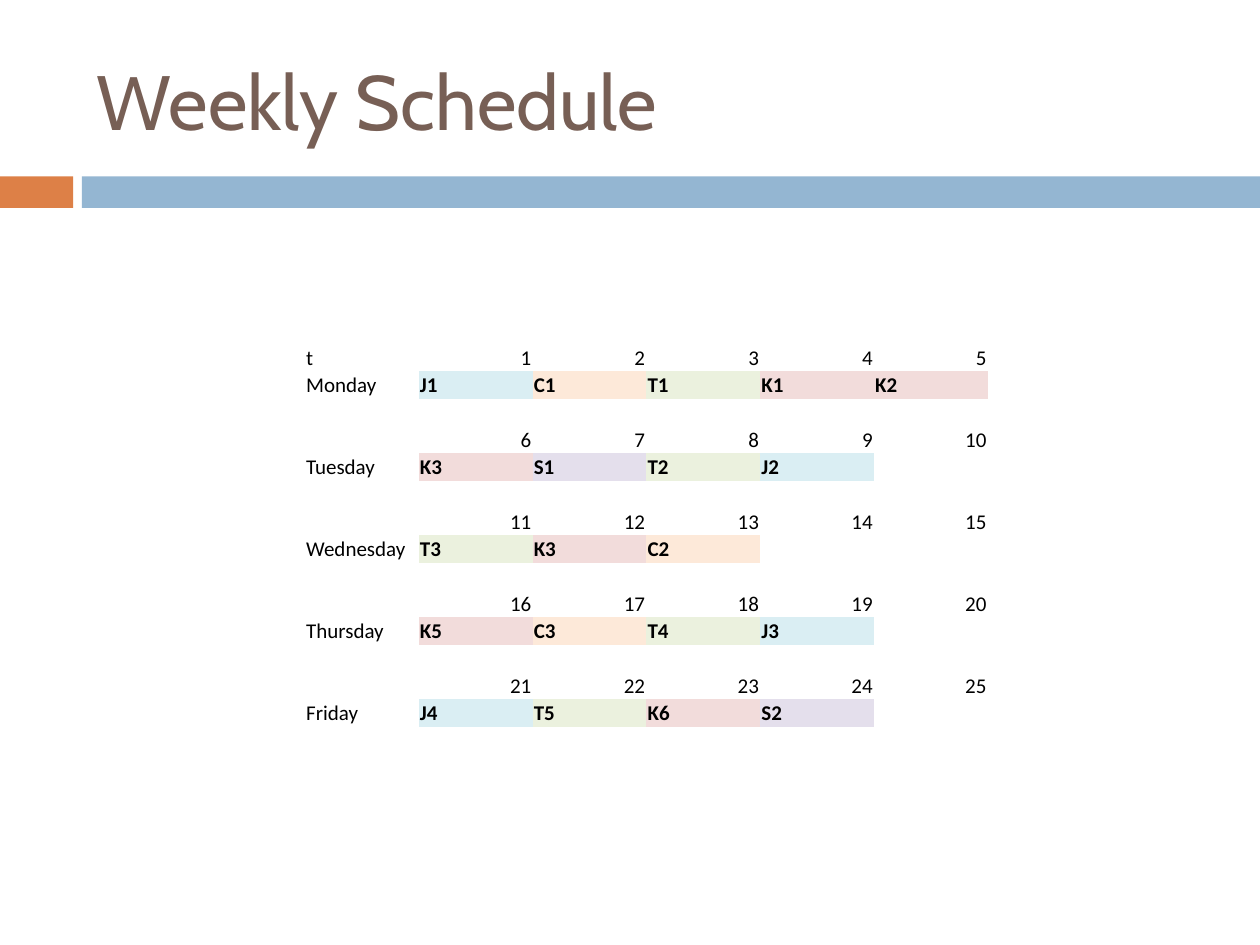
from pptx import Presentation
from pptx import util as u
from pptx.dml.color import RGBColor
from pptx.enum import shapes, text
from pptx.oxml.ns import qn

SUBJECT_FILLS = {"J": "DAEEF3", "C": "FDE9D9", "T": "EBF1DE", "K": "F2DCDB", "S": "E4DFEC"}
WEEK = {
    "Monday": ["J1", "C1", "T1", "K1", "K2"],
    "Tuesday": ["K3", "S1", "T2", "J2"],
    "Wednesday": ["T3", "K3", "C2"],
    "Thursday": ["K5", "C3", "T4", "J3"],
    "Friday": ["J4", "T5", "K6", "S2"],
}
PERIODS = 5
ROWS_PER_DAY = 3
NO_STYLE_NO_GRID = "{2D5ABB26-0587-4C30-8999-92F81FD0307C}"


def rgb(code):
    return RGBColor.from_string(code)


class Deck:
    """Style and current slide; boxes are (left, top, width, height) in percent of the slide."""

    title_font, body_font = "Cabin", "Calibri"
    title_size, body_size = 44, 12
    title_color, body_color = "775F55", "000000"

    def __init__(self, width, height):
        self.prs = Presentation()
        self.prs.slide_width, self.prs.slide_height = u.Inches(width), u.Inches(height)
        self.s = self.prs.slides.add_slide(self.prs.slide_layouts[6])

    def place(self, box):
        w, h = self.prs.slide_width, self.prs.slide_height
        return [round(share * side / 100) for share, side in zip(box, (w, h, w, h))]

    def format_runs(self, p, font, size, color, bold=False):
        for r in p.runs:
            r.font.name, r.font.size, r.font.bold = font, u.Pt(size), bold
            r.font.color.rgb = rgb(color)

    def bar(self, box, color):
        sp = self.s.shapes.add_shape(shapes.MSO_SHAPE.RECTANGLE, *self.place(box))
        sp.shadow.inherit = False
        sp.fill.solid()
        sp.fill.fore_color.rgb = rgb(color)
        sp.line.fill.background()

    def title(self, box, words):
        tf = self.s.shapes.add_textbox(*self.place(box)).text_frame
        tf.word_wrap = True
        tf.vertical_anchor = text.MSO_ANCHOR.MIDDLE
        tf.text = words
        self.format_runs(tf.paragraphs[0], self.title_font, self.title_size, self.title_color)

    def table(self, box, rows, cols):
        """Add a plain table whose cells are all empty and tightly spaced."""
        frame = self.s.shapes.add_table(rows, cols, *self.place(box))
        table = frame.table
        table.first_row = table.horz_banding = False
        next(frame._element.iter(qn("a:tableStyleId"))).text = NO_STYLE_NO_GRID
        for cell in table.iter_cells():
            cell.margin_left = cell.margin_right = cell.margin_top = u.Inches(0.01)
            cell.margin_bottom = 0
            cell.vertical_anchor = text.MSO_ANCHOR.BOTTOM
            cell.fill.background()
            # An empty cell takes its line height from the end-of-paragraph size.
            end = cell.text_frame.paragraphs[0]._p.get_or_add_endParaRPr()
            end.set("sz", str(self.body_size * 100))
        return table

    def cell(self, cell, words, right=False, bold=False, fill=None):
        p = cell.text_frame.paragraphs[0]
        p.text = words
        if right:
            p.alignment = text.PP_ALIGN.RIGHT
        self.format_runs(p, self.body_font, self.body_size, self.body_color, bold)
        if fill:
            cell.fill.solid()
            cell.fill.fore_color.rgb = rgb(fill)


def main():
    deck = Deck(10, 7.5)
    deck.bar((0, 18.67, 5.8, 3.33), "DD8047")
    deck.bar((6.5, 18.67, 93.5, 3.33), "94B6D2")
    deck.title((6.7, 3.33, 89.2, 14.4), "Weekly Schedule")

    # Each day has a number row and a lesson row, with a blank row between days.
    table = deck.table((24.2, 36.4, 54.2, 40.53), len(WEEK) * ROWS_PER_DAY - 1, PERIODS + 1)
    deck.cell(table.cell(0, 0), "t")
    for day, (name, lessons) in enumerate(WEEK.items()):
        row = day * ROWS_PER_DAY
        for col in range(1, PERIODS + 1):
            deck.cell(table.cell(row, col), str(day * PERIODS + col), right=True)
        deck.cell(table.cell(row + 1, 0), name)
        for col, lesson in enumerate(lessons, 1):
            deck.cell(table.cell(row + 1, col), lesson, bold=True, fill=SUBJECT_FILLS[lesson[0]])

    deck.prs.save("out.pptx")


if __name__ == "__main__":
    main()
